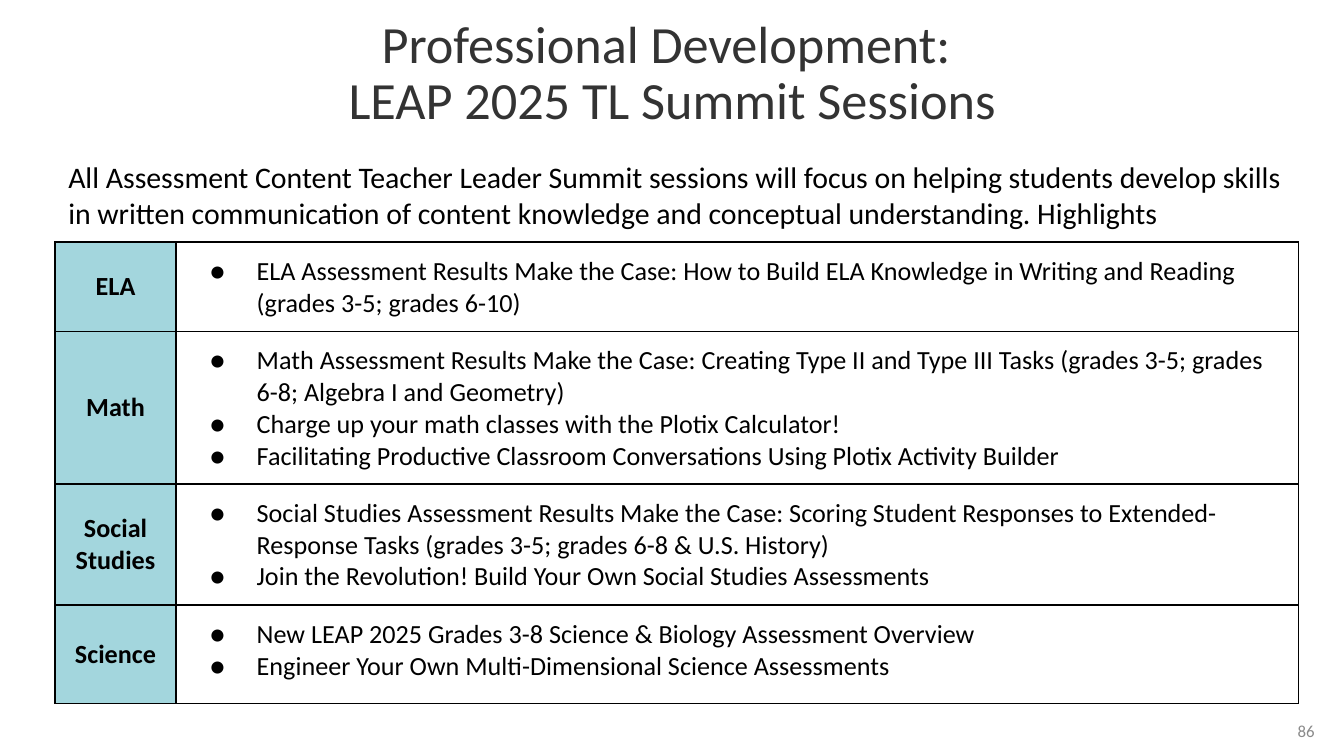
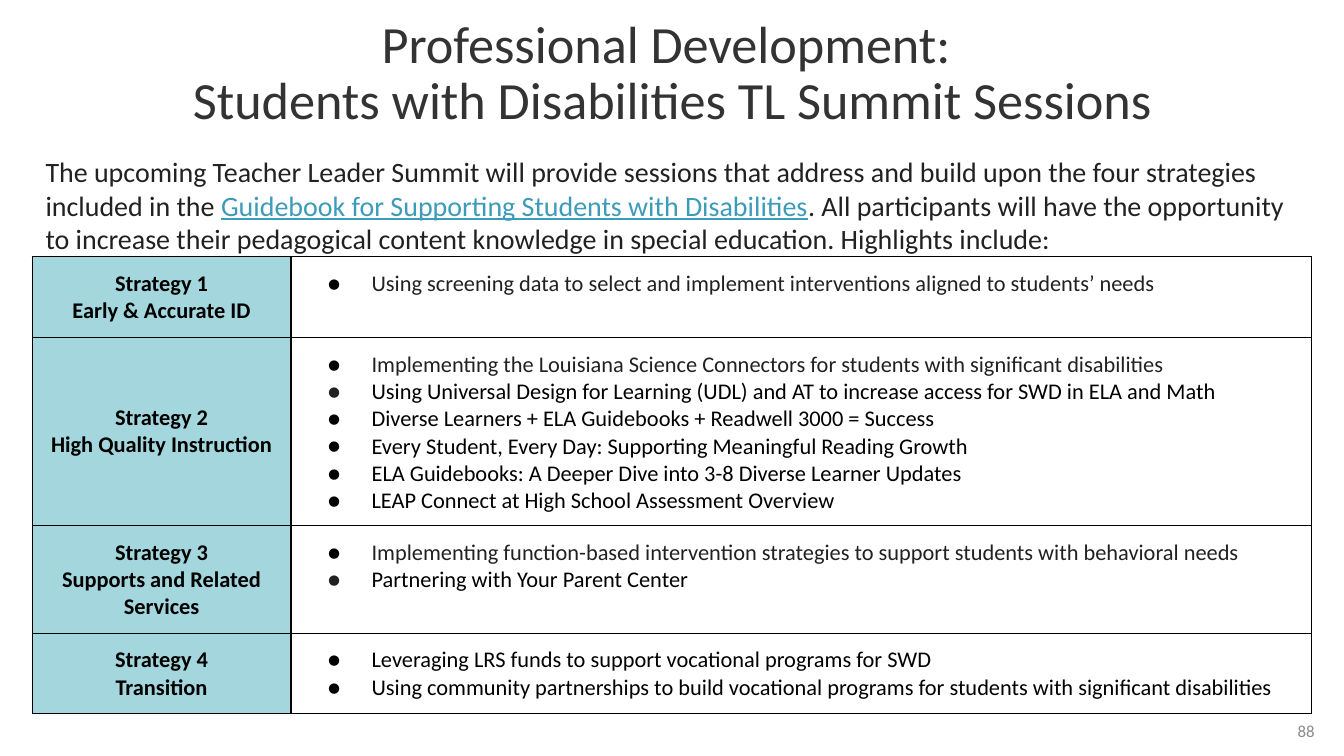
import pptx
import pptx.dml.color
import pptx.enum.text
import pptx.oxml
import pptx.oxml.ns
import pptx.util

RGB = pptx.dml.color.RGBColor
ALIGN = pptx.enum.text.PP_ALIGN
ANCHOR = pptx.enum.text.MSO_ANCHOR

BLACK = RGB(0x00, 0x00, 0x00)
DARK = RGB(0x21, 0x21, 0x21)
SLATE = RGB(0x33, 0x33, 0x33)
GREY = RGB(0x8A, 0x8A, 0x8A)
TEAL = RGB(0xA3, 0xD6, 0xDD)
LINK = RGB(0x3D, 0x9B, 0xBA)
FONT = "Calibri"

# The slide is a grid of 100 columns by 100 rows
WIDE = pptx.util.Inches(10)
HIGH = pptx.util.Inches(5.625)
PAD = pptx.util.Inches(0.1)

# Each session is its text, then its text and bullet colours if not black
LEAP = [
    (11.02, ["ELA"], [
        ("ELA Assessment Results Make the Case: How to Build ELA Knowledge "
         "in Writing and Reading (grades 3-5; grades 6-10)",)]),
    (18.67, ["Math"], [
        ("Math Assessment Results Make the Case: Creating Type II and Type III "
         "Tasks (grades 3-5; grades 6-8; Algebra I and Geometry)",),
        ("Charge up your math classes with the Plotix Calculator!",),
        ("Facilitating Productive Classroom Conversations Using Plotix "
         "Activity Builder",)]),
    (14.93, ["Social", "Studies"], [
        ("Social Studies Assessment Results Make the Case: Scoring Student "
         "Responses to Extended-Response Tasks (grades 3-5; grades 6-8 & "
         "U.S. History)",),
        ("Join the Revolution! Build Your Own Social Studies Assessments",)]),
    (12.98, ["Science"], [
        ("New LEAP 2025 Grades 3-8 Science & Biology Assessment Overview",),
        ("Engineer Your Own Multi-Dimensional Science Assessments",)]),
]

SWD = [
    (8.53, ["Strategy 1", "Early & Accurate ID"], [
        ("Using screening data to select and implement interventions aligned "
         "to students’ needs", DARK)]),
    (23.29, ["Strategy 2", "High Quality Instruction"], [
        ("Implementing the Louisiana Science Connectors for students with "
         "significant disabilities", DARK),
        ("Using Universal Design for Learning (UDL) and AT to increase access "
         "for SWD in ELA and Math", BLACK, DARK),
        ("Diverse Learners + ELA Guidebooks + Readwell 3000 = Success",),
        ("Every Student, Every Day: Supporting Meaningful Reading Growth",),
        ("ELA Guidebooks: A Deeper Dive into 3-8 Diverse Learner Updates",),
        ("LEAP Connect at High School Assessment Overview",)]),
    (10.49, ["Strategy 3", "Supports and Related Services"], [
        ("Implementing function-based intervention strategies to support "
         "students with behavioral needs", DARK),
        ("Partnering with Your Parent Center", BLACK, DARK)]),
    (8.18, ["Strategy 4", "Transition"], [
        ("Leveraging LRS funds to support vocational programs for SWD",),
        ("Using community partnerships to build vocational programs for "
         "students with significant disabilities",)]),
]


def across(cols):
    return round(WIDE * cols / 100)


def down(rows):
    return round(HIGH * rows / 100)


def style(para, size, ink, align=ALIGN.LEFT, bold=False):
    para.alignment = align
    font = para.font
    font.name, font.size, font.bold = FONT, pptx.util.Pt(size), bold
    font.color.rgb = ink


def paras(frame, count):
    """Return the first paragraph and as many more as needed."""
    return [frame.paragraphs[0]] + [frame.add_paragraph()
                                    for _ in range(count - 1)]


def box(slide, left, top, width, height, anchor=ANCHOR.TOP, pad=PAD):
    """Add a wrapping text box and return its frame."""
    frame = slide.shapes.add_textbox(
        across(left), down(top), across(width), down(height)).text_frame
    frame.word_wrap = True
    frame.vertical_anchor = anchor
    frame.margin_left = frame.margin_right = PAD
    frame.margin_top = frame.margin_bottom = pad
    return frame


def title(slide, lines):
    frame = box(slide, 0, -0.36, 100, 20.46, ANCHOR.MIDDLE)
    for para, line in zip(paras(frame, len(lines)), lines):
        para.add_run().text = line
        para.line_spacing = 0.9
        style(para, 28, SLATE, ALIGN.CENTER)


def folio(slide, number):
    frame = box(slide, 74.4, 93.33, 24.4, 6.76, ANCHOR.MIDDLE, PAD // 2)
    para = frame.paragraphs[0]
    para.add_run().text = str(number)
    style(para, 9, GREY, ALIGN.RIGHT)


def intro(slide, place, parts, size, ink):
    """Write the lead text; every second part looks like a link."""
    para = box(slide, *place).paragraphs[0]
    for index, part in enumerate(parts):
        run = para.add_run()
        run.text = part
        if index % 2:
            run.font.color.rgb = LINK
            run.font.underline = True
    style(para, size, ink)


def bullet(para, dot, hang):
    props = para._p.get_or_add_pPr()
    props.set("marL", str(pptx.util.Inches(0.5)))
    props.set("indent", str(-pptx.util.Inches(hang)))
    space = pptx.oxml.ns.nsdecls("a")
    for xml in (f'<a:buClr {space}><a:srgbClr val="{dot}"/></a:buClr>',
                f'<a:buFont {space} typeface="{FONT}"/>',
                f'<a:buChar {space} char="●"/>'):
        props.append(pptx.oxml.parse_xml(xml))


def border(cell):
    props = cell._tc.get_or_add_tcPr()
    for side in "LRTB":
        props.append(pptx.oxml.parse_xml(
            f'<a:ln{side} {pptx.oxml.ns.nsdecls("a")} '
            f'w="{pptx.util.Pt(0.75)}"><a:solidFill>'
            f'<a:srgbClr val="{BLACK}"/></a:solidFill></a:ln{side}>'))


def label(cell, lines, size):
    cell.vertical_anchor = ANCHOR.MIDDLE
    cell.fill.solid()
    cell.fill.fore_color.rgb = TEAL
    for para, line in zip(paras(cell.text_frame, len(lines)), lines):
        para.add_run().text = line
        style(para, size, BLACK, ALIGN.CENTER, True)


def listing(cell, items, size, hang):
    cell.fill.background()
    for para, item in zip(paras(cell.text_frame, len(items)), items):
        text, ink, dot = (*item, BLACK, BLACK)[:3]
        para.add_run().text = text
        bullet(para, dot, hang)
        style(para, size, ink)


def grid(slide, left, top, cols, rows, size, hang):
    """Add the table of subjects and their sessions."""
    total = sum(row[0] for row in rows)
    table = slide.shapes.add_table(
        len(rows), 2, across(left), down(top),
        across(sum(cols)), down(total)).table
    table.first_row = table.horz_banding = False
    for col, width in zip(table.columns, cols):
        col.width = across(width)
    for row, (height, names, items) in zip(table.rows, rows):
        row.height = down(height)
        for cell in row.cells:
            cell.margin_left = cell.margin_right = PAD
            cell.margin_top = cell.margin_bottom = PAD
            border(cell)
        label(row.cells[0], names, size)
        listing(row.cells[1], items, size, hang)


def page(deck, topic, number):
    """Start a slide with the shared title and number."""
    slide = deck.slides.add_slide(deck.slide_layouts[6])
    folio(slide, number)
    title(slide, ["Professional Development: ", topic])
    return slide


def main():
    deck = pptx.Presentation()
    deck.slide_width, deck.slide_height = WIDE, HIGH

    # Assessment content sessions
    slide = page(deck, "LEAP 2025 TL Summit Sessions", 86)
    intro(slide, (4.1, 19.2, 92.5, 11.91), [
        "All Assessment Content Teacher Leader Summit sessions will focus on "
        "helping students develop skills in written communication of content "
        "knowledge and conceptual understanding. Highlights"], 16, BLACK)
    grid(slide, 4.1, 32, (9, 83.5), LEAP, 14, 0.35)

    # Students with disabilities sessions
    slide = page(deck, "Students with Disabilities TL Summit Sessions", 88)
    intro(slide, (2.4, 18.67, 95.2, 17.07), [
        "The upcoming Teacher Leader Summit will provide sessions that address "
        "and build upon the four strategies included in the ",
        "Guidebook for Supporting Students with Disabilities",
        ". All participants will have the opportunity to increase their "
        "pedagogical content knowledge in special education. "
        "Highlights include:"], 15, DARK)
    grid(slide, 2.4, 33.96, (19.25, 75.95), SWD, 12, 0.33)

    deck.save("out.pptx")


if __name__ == "__main__":
    main()
